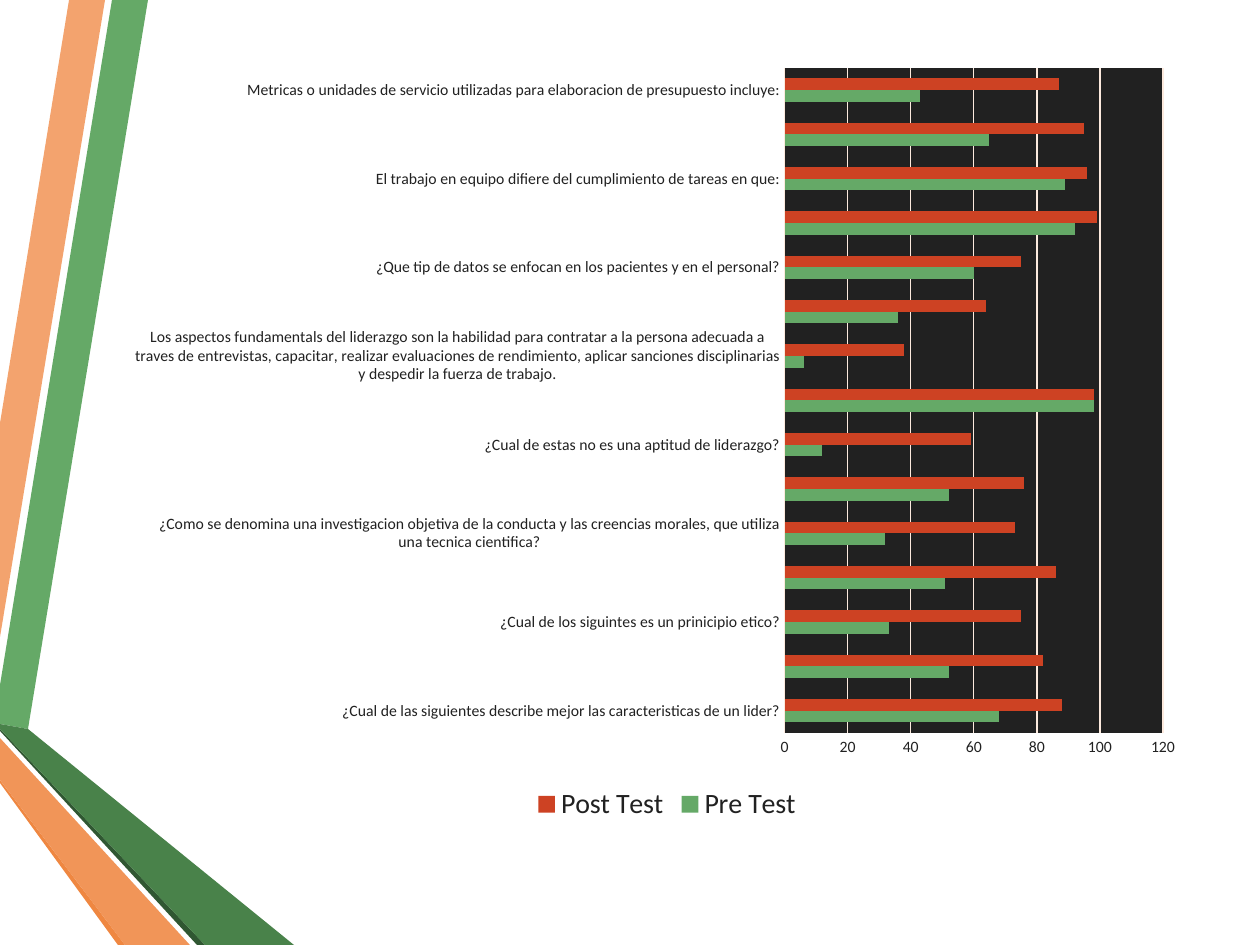
"""Builds a slide comparing pre-test and post-test scores by question."""
import pptx
import pptx.chart.data
import pptx.dml.color
import pptx.enum.chart
import pptx.oxml
import pptx.oxml.ns
import pptx.util

RGB = pptx.dml.color.RGBColor
GREEN = RGB(0x65, 0xA9, 0x67)
MID_GREEN = RGB(0x49, 0x82, 0x4A)
DARK_GREEN = RGB(0x30, 0x57, 0x32)
PALE_ORANGE = RGB(0xF3, 0xA3, 0x6E)
ORANGE = RGB(0xF1, 0x95, 0x58)
DEEP_ORANGE = RGB(0xEF, 0x87, 0x41)
RED = RGB(0xCD, 0x42, 0x23)
CREAM = RGB(0xFC, 0xEA, 0xDE)
INK = RGB(0x21, 0x21, 0x21)

RIBBONS = [
    (GREEN, [(0, 685), (0, 724), (28, 729), (148, 0), (112, 0)]),
    (PALE_ORANGE, [(105, 0), (69, 0), (0, 423), (0, 637)]),
    (DEEP_ORANGE, [(0, 780), (0, 783), (118, 945), (125, 945)]),
    (DARK_GREEN, [(0, 729), (0, 731), (197, 945), (205, 945)]),
    (MID_GREEN, [(0, 729), (205, 945), (294, 945), (28, 729), (0, 724)]),
    (ORANGE, [(0, 780), (125, 945), (190, 945), (0, 738)]),
]

SCORES = [
    ("¿Cual de las siguientes describe mejor las caracteristicas de un lider?", 68, 88),
    ("", 52, 82),
    ("¿Cual de los siguintes es un prinicipio etico?", 33, 75),
    ("", 51, 86),
    ("¿Como se denomina una investigacion objetiva de la conducta y las creencias "
     "morales, que utiliza una tecnica cientifica?", 32, 73),
    ("", 52, 76),
    ("¿Cual de estas no es una aptitud de liderazgo?", 12, 59),
    ("", 98, 98),
    ("Los aspectos fundamentals del liderazgo son la habilidad para contratar a la "
     "persona adecuada a traves de entrevistas, capacitar, realizar evaluaciones de "
     "rendimiento, aplicar sanciones disciplinarias y despedir la fuerza de trabajo.", 6, 38),
    ("", 36, 64),
    ("¿Que tip de datos se enfocan en los pacientes y en el personal?", 60, 75),
    ("", 92, 99),
    ("El trabajo en equipo difiere del cumplimiento de tareas en que:", 89, 96),
    ("", 65, 95),
    ("Metricas o unidades de servicio utilizadas para elaboracion de presupuesto "
     "incluye:", 43, 87),
]


class SlideBuilder:
    """Holds the style and the current slide."""

    SCALE = 914400 / 126
    FONT = "Calibri"

    def __init__(self, slide):
        self.slide = slide

    def px(self, length):
        """Turns px into EMU."""
        return pptx.util.Emu(round(length * self.SCALE))

    def style_font(self, font, size):
        """Applies the text style at a size in points."""
        font.name = self.FONT
        font.size = pptx.util.Pt(size)
        font.color.rgb = INK

    def ribbon(self, color, corners):
        """Draws a filled polygon."""
        outline = self.slide.shapes.build_freeform(*corners[0], scale=self.SCALE)
        outline.add_line_segments(corners[1:], close=True)
        band = outline.convert_to_shape()
        band.shadow.inherit = False
        band.fill.solid()
        band.fill.fore_color.rgb = color
        band.line.fill.background()

    def rule(self, line):
        """Styles an axis line or gridline."""
        line.color.rgb = CREAM
        line.width = pptx.util.Pt(0.75)

    def bar_chart(self, frame, plot_box, categories, series):
        """Draws clustered bars; both boxes are left, top, width, height."""
        data = pptx.chart.data.CategoryChartData()
        data.categories = categories
        for name, values, _ in series:
            data.add_series(name, values)
        chart = self.slide.shapes.add_chart(
            pptx.enum.chart.XL_CHART_TYPE.BAR_CLUSTERED,
            *map(self.px, frame), data).chart
        chart.has_title = False
        self.style_font(chart.font, 10)

        bars = chart.plots[0]
        bars.gap_width = 182
        bars.overlap = 0
        bars.vary_by_categories = False
        for bar, (_, _, color) in zip(bars.series, series):
            bar.format.fill.solid()
            bar.format.fill.fore_color.rgb = color

        questions, scores = chart.category_axis, chart.value_axis
        for axis in (questions, scores):
            axis.major_tick_mark = pptx.enum.chart.XL_TICK_MARK.NONE
            axis.minor_tick_mark = pptx.enum.chart.XL_TICK_MARK.NONE
            self.style_font(axis.tick_labels.font, 9)
        self.rule(questions.format.line)
        scores.format.line.fill.background()
        scores.has_major_gridlines = True
        self.rule(scores.major_gridlines.format.line)
        scores.minimum_scale, scores.maximum_scale, scores.major_unit = 0, 120, 20

        chart.has_legend = True
        chart.legend.position = pptx.enum.chart.XL_LEGEND_POSITION.BOTTOM
        chart.legend.include_in_layout = False
        self.style_font(chart.legend.font, 16)
        self.plot_area(chart, frame, plot_box)

    def plot_area(self, chart, frame, box):
        """Places and fills the inner plot area."""
        left, top, width, height = frame
        shares = {"x": (box[0] - left) / width, "y": (box[1] - top) / height,
                  "w": box[2] / width, "h": box[3] / height}
        modes = "".join(f'<c:{side}Mode val="edge"/>' for side in "xy")
        places = "".join(f'<c:{side} val="{share:.4f}"/>' for side, share in shares.items())
        namespaces = pptx.oxml.ns.nsdecls("c", "a")
        area = chart._chartSpace.chart.plotArea
        for old_layout in area.findall(pptx.oxml.ns.qn("c:layout")):
            area.remove(old_layout)
        area.insert(0, pptx.oxml.parse_xml(
            f'<c:layout {namespaces}><c:manualLayout><c:layoutTarget val="inner"/>'
            f'{modes}{places}</c:manualLayout></c:layout>'))
        area.append(pptx.oxml.parse_xml(
            f'<c:spPr {namespaces}><a:solidFill><a:srgbClr val="{INK}"/></a:solidFill>'
            '<a:ln><a:noFill/></a:ln></c:spPr>'))


def main():
    """Builds and saves the presentation."""
    deck = pptx.Presentation()
    deck.slide_width = pptx.util.Inches(10)
    deck.slide_height = pptx.util.Inches(7.5)
    builder = SlideBuilder(deck.slides.add_slide(deck.slide_layouts[6]))
    for color, corners in RIBBONS:
        builder.ribbon(color, corners)
    questions, pre_test, post_test = zip(*SCORES)
    builder.bar_chart(
        (135, 53, 1062, 774), (784, 68, 379, 665), questions,
        [("Pre Test", pre_test, GREEN), ("Post Test", post_test, RED)])
    deck.save("out.pptx")


if __name__ == "__main__":
    main()
